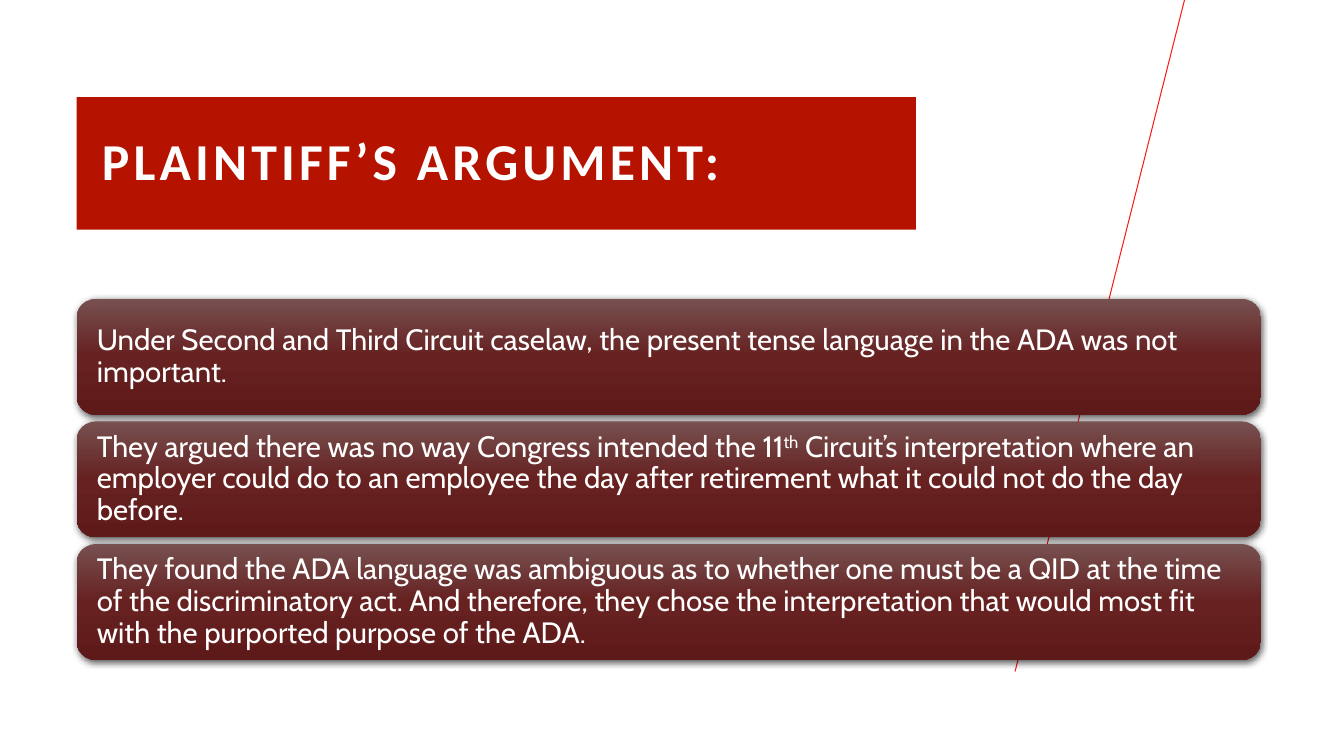
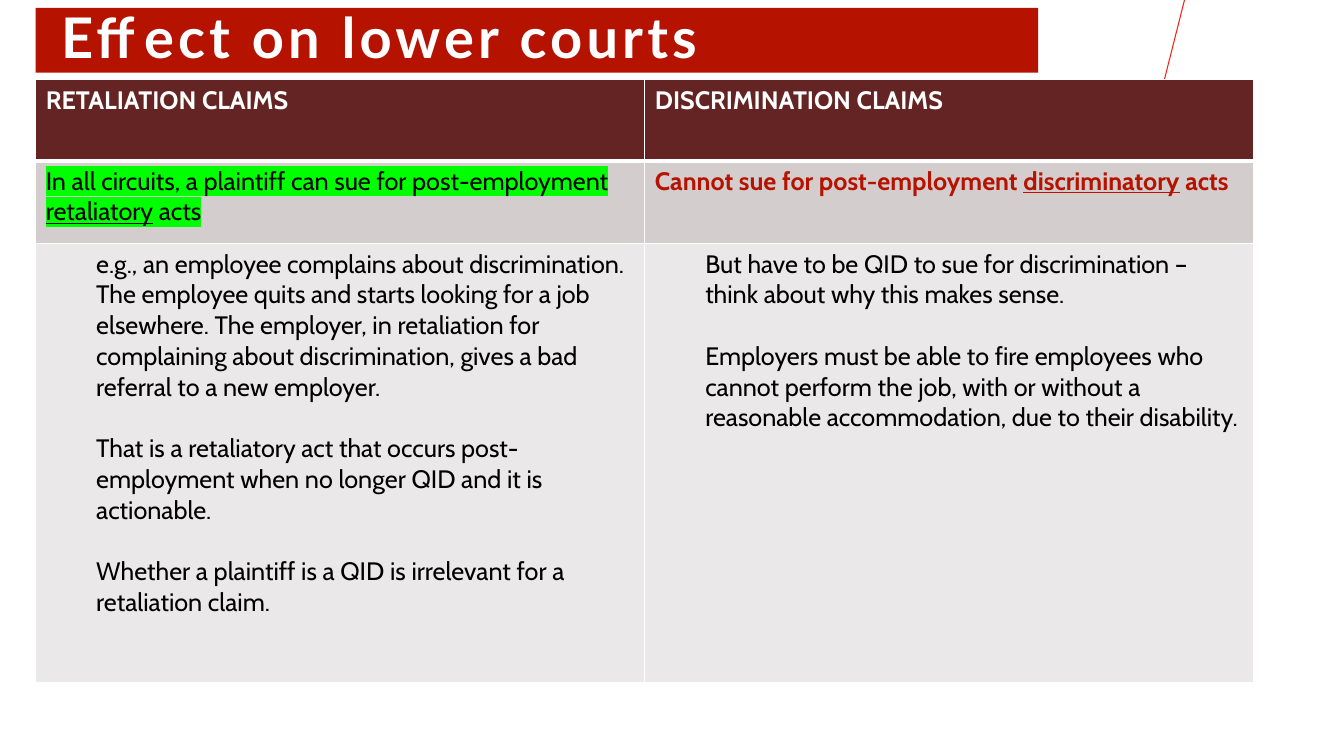
from dataclasses import dataclass

from pptx import Presentation
from pptx.dml.color import RGBColor
from pptx.enum.shapes import MSO_CONNECTOR, MSO_SHAPE
from pptx.enum.text import MSO_ANCHOR, MSO_AUTO_SIZE, PP_ALIGN
from pptx.oxml import parse_xml
from pptx.oxml.ns import nsdecls, qn
from pptx.util import Cm, Pt


@dataclass(frozen=True)
class Theme:
    red: str = "B51200"
    line: str = "FD1B17"
    white: str = "FFFFFF"
    black: str = "000000"
    header: str = "632423"
    claim: str = "D3CDCD"
    detail: str = "EAE8E8"
    highlight: str = "00FF00"
    card_stops: tuple = ((0, "775050"), (50, "662120"), (100, "5E1A19"))
    body_font: str = "Cabin"
    card_size: int = 21
    table_size: int = 18
    table_gap: int = 22
    line_spacing: float = 0.9


THEME = Theme()

ARGUMENTS = [
    ["Under Second and Third Circuit caselaw, the present tense language in the ADA "
     "was not important."],
    ["They argued there was no way Congress intended the 11",
     ("th", {"baseline": 30}),
     " Circuit’s interpretation where an employer could do to an employee the day after "
     "retirement what it could not do the day before."],
    ["They found the ADA language was ambiguous as to whether one must be a QID at the "
     "time of the discriminatory act. And therefore, they chose the interpretation that "
     "would most fit with the purported purpose of the ADA."],
]

HEADERS = ["RETALIATION CLAIMS", "DISCRIMINATION CLAIMS"]
CLAIMS = [
    ["In all circuits, a plaintiff can sue for post-employment ",
     ("retaliatory", {"underline": True}), " acts"],
    ["Cannot sue for post-employment ",
     ("discriminatory", {"underline": True}), " acts"],
]
CLAIM_STYLES = [
    {"color": THEME.black, "highlight": THEME.highlight},
    {"color": THEME.red, "bold": True},
]
# Each paragraph is paired with whether a gap comes before it
DETAILS = [
    [("e.g., an employee complains about discrimination.", False),
     ("The employee quits and starts looking for a job elsewhere. The employer, in "
      "retaliation for complaining about discrimination, gives a bad referral to a new "
      "employer.", False),
     ("That is a retaliatory act that occurs post-employment when no longer QID and it "
      "is actionable.", True),
     ("Whether a plaintiff is a QID is irrelevant for a retaliation claim.", True)],
    [("But have to be QID to sue for discrimination – think about why this makes sense.",
      False),
     ("Employers must be able to fire employees who cannot perform the job, with or "
      "without a reasonable accommodation, due to their disability.", True)],
]


# Text helpers
def set_attributes(target, values):
    for name, value in values.items():
        setattr(target, name, value)


def add_span(para, text, style):
    values = dict(style)
    color = values.pop("color")
    highlight = values.pop("highlight", None)
    baseline = values.pop("baseline", 0)
    spacing = values.pop("spacing", 0)
    span = para.add_run()
    span.text = text
    set_attributes(span.font, values)
    span.font.color.rgb = RGBColor.from_string(color)
    properties = span.font._element
    if baseline:
        properties.set("baseline", str(baseline * 1000))
    if spacing:
        properties.set("spc", str(spacing * 100))
    if highlight:
        properties.find(qn("a:solidFill")).addnext(parse_xml(
            f'<a:highlight {nsdecls("a")}><a:srgbClr val="{highlight}"/></a:highlight>'))


def add_spans(para, parts, style):
    for part in parts:
        text, changes = (part, {}) if isinstance(part, str) else part
        add_span(para, text, {**style, **changes})


# Shared slide parts
def add_slanted_line(layout, slide):
    line = slide.shapes.add_connector(
        MSO_CONNECTOR.STRAIGHT, Cm(29.85), Cm(0), Cm(25.58), Cm(16.92))
    line.line.color.rgb = RGBColor.from_string(THEME.line)
    line.line.width = Pt(0.75)
    line._element.spPr.append(parse_xml(f'<a:effectLst {nsdecls("a")}/>'))
    # The layout carries the line for every slide
    layout.shapes.element.append(line._element)


def set_title(slide, text, area, font, size):
    title = slide.shapes.title
    set_attributes(title, dict(zip(("left", "top", "width", "height"), map(Cm, area))))
    title.fill.solid()
    title.fill.fore_color.rgb = RGBColor.from_string(THEME.red)
    frame = title.text_frame
    set_attributes(frame, {
        "word_wrap": True, "auto_size": MSO_AUTO_SIZE.NONE,
        "vertical_anchor": MSO_ANCHOR.MIDDLE,
        "margin_left": Cm(0.64), "margin_right": Cm(0.25),
        "margin_top": Cm(0.13), "margin_bottom": Cm(0.13)})
    para = frame.paragraphs[0]
    set_attributes(para, {"alignment": PP_ALIGN.LEFT,
                          "line_spacing": THEME.line_spacing})
    add_span(para, text, {"name": font, "size": Pt(size), "bold": True,
                          "color": THEME.white, "spacing": 3})


# Argument cards
def add_card(slide, parts, top):
    card = slide.shapes.add_shape(
        MSO_SHAPE.ROUNDED_RECTANGLE, Cm(1.93), Cm(top), Cm(29.85), Cm(2.92))
    stops = "".join(f'<a:gs pos="{position * 1000}"><a:srgbClr val="{color}"/></a:gs>'
                    for position, color in THEME.card_stops)
    properties = card._element.spPr
    properties.append(parse_xml(
        f'<a:gradFill {nsdecls("a")} rotWithShape="1"><a:gsLst>{stops}</a:gsLst>'
        '<a:lin ang="5400000" scaled="0"/></a:gradFill>'))
    card.line.fill.background()
    properties.append(parse_xml(
        f'<a:effectLst {nsdecls("a")}><a:outerShdw blurRad="{Pt(4.5)}" '
        f'dist="{Pt(1.5)}" dir="5400000" algn="ctr" rotWithShape="0">'
        f'<a:srgbClr val="{THEME.black}"><a:alpha val="63000"/></a:srgbClr>'
        '</a:outerShdw></a:effectLst>'))
    frame = card.text_frame
    set_attributes(frame, {
        "word_wrap": True, "vertical_anchor": MSO_ANCHOR.MIDDLE,
        "margin_left": Cm(0.37), "margin_right": Cm(0.37),
        "margin_top": Cm(0.37), "margin_bottom": Cm(0.37)})
    para = frame.paragraphs[0]
    set_attributes(para, {"alignment": PP_ALIGN.LEFT,
                          "line_spacing": THEME.line_spacing})
    add_spans(para, parts, {"name": THEME.body_font, "size": Pt(THEME.card_size),
                            "color": THEME.white})


# Claims table
def format_cell(cell, fill, top=1, bottom=1):
    properties = cell._tc.get_or_add_tcPr()
    for side, width in (("L", 1), ("R", 1), ("T", top), ("B", bottom)):
        properties.append(parse_xml(
            f'<a:ln{side} {nsdecls("a")} w="{Pt(width)}"><a:solidFill>'
            f'<a:srgbClr val="{THEME.white}"/></a:solidFill></a:ln{side}>'))
    cell.fill.solid()
    cell.fill.fore_color.rgb = RGBColor.from_string(fill)


def fill_details(cell, details, style):
    frame = cell.text_frame
    for index, (text, gap) in enumerate(details):
        para = frame.add_paragraph() if index else frame.paragraphs[0]
        para.level = 1
        properties = para._p.get_or_add_pPr()
        properties.set("marL", str(Cm(1.27)))
        properties.set("indent", "0")
        if gap:
            para.space_before = Pt(THEME.table_gap)
        add_span(para, text, style)


def add_claims_table(slide):
    heights = [2.04, 2.09, 11.05]
    table = slide.shapes.add_table(
        len(heights), len(HEADERS), Cm(0.9), Cm(2.01), Cm(30.7), Cm(sum(heights))).table
    set_attributes(table, {"first_row": False, "horz_banding": False})
    for row, height in zip(table.rows, heights):
        row.height = Cm(height)
    base = {"name": THEME.body_font, "size": Pt(THEME.table_size), "color": THEME.black}
    for index, header in enumerate(HEADERS):
        title, claim, detail = (table.cell(row, index) for row in range(len(heights)))
        format_cell(title, THEME.header, bottom=3)
        format_cell(claim, THEME.claim, top=3)
        format_cell(detail, THEME.detail)
        add_span(title.text_frame.paragraphs[0], header,
                 {**base, "color": THEME.white, "bold": True})
        add_spans(claim.text_frame.paragraphs[0], CLAIMS[index],
                  {**base, **CLAIM_STYLES[index]})
        fill_details(detail, DETAILS[index], base)


def main():
    deck = Presentation()
    set_attributes(deck, {"slide_width": Cm(33.87), "slide_height": Cm(19.05)})
    layout = deck.slide_layouts.get_by_name("Title Only")

    argument_slide = deck.slides.add_slide(layout)
    add_slanted_line(layout, argument_slide)
    set_title(argument_slide, "PLAINTIFF’S ARGUMENT:", (1.93, 2.45, 21.15, 3.34),
              "Calibri", 37)
    for index, parts in enumerate(ARGUMENTS):
        add_card(argument_slide, parts, 7.53 + index * 3.09)

    effect_slide = deck.slides.add_slide(layout)
    set_title(effect_slide, "Effect on lower courts", (0.9, 0.2, 25.26, 1.63),
              "Lato", 40)
    add_claims_table(effect_slide)

    deck.save("out.pptx")


if __name__ == "__main__":
    main()
